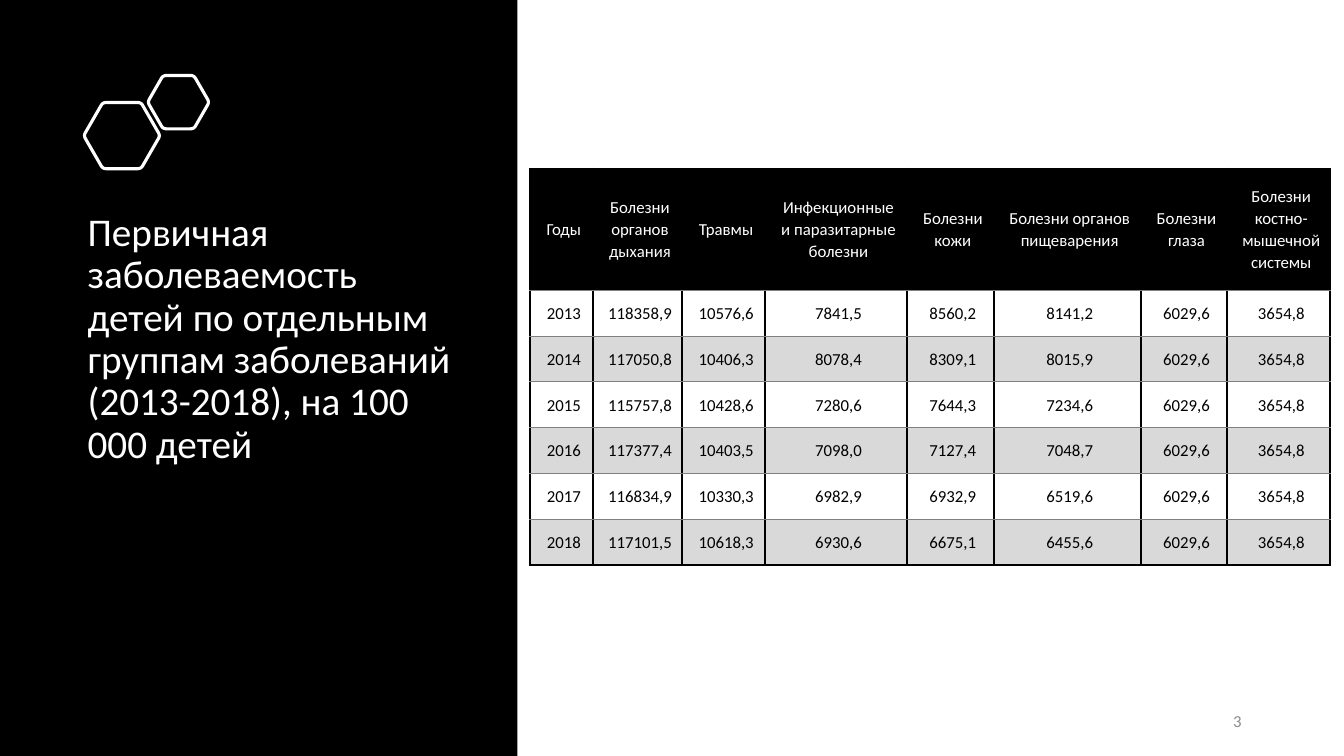
"""Builds the slide on primary childhood morbidity by disease group."""
import math
from dataclasses import dataclass

import lxml.etree
import pptx
import pptx.dml.color
import pptx.enum.shapes
import pptx.enum.text
import pptx.oxml.ns
import pptx.util

Pt = pptx.util.Pt
Align = pptx.enum.text.PP_ALIGN
Anchor = pptx.enum.text.MSO_ANCHOR


@dataclass(frozen=True)
class Theme:
    """Colours, font and type sizes."""
    dark: str = "000000"
    light: str = "FFFFFF"
    band: str = "D9D9D9"
    rule: str = "808080"
    muted: str = "8C8C8C"
    font: str = "Calibri"
    title_size: float = 28
    body_size: float = 12
    thick: float = 1.5
    thin: float = 0.5
    outline: float = 2.25


TITLE = ("Первичная заболеваемость детей по отдельным группам "
         "заболеваний (2013-2018), на 100 000 детей")
HEADERS = ["Годы", "Болезни органов дыхания", "Травмы",
           "Инфекционные\nи паразитарные болезни", "Болезни кожи",
           "Болезни органов пищеварения", "Болезни\nглаза",
           "Болезни костно-мышечной системы"]
RATES = [
    ["2013", "118358,9", "10576,6", "7841,5", "8560,2", "8141,2"],
    ["2014", "117050,8", "10406,3", "8078,4", "8309,1", "8015,9"],
    ["2015", "115757,8", "10428,6", "7280,6", "7644,3", "7234,6"],
    ["2016", "117377,4", "10403,5", "7098,0", "7127,4", "7048,7"],
    ["2017", "116834,9", "10330,3", "6982,9", "6932,9", "6519,6"],
    ["2018", "117101,5", "10618,3", "6930,6", "6675,1", "6455,6"],
]
CONSTANT_RATES = ["6029,6", "3654,8"]
COLUMN_WIDTHS = [44.6, 64.1, 59, 101.5, 61.9, 105.1, 61.9, 73.4]
HEADER_HEIGHT, ROW_HEIGHT = 87, 32.7
CELL_FORMAT = {"margin_left": Pt(6.5), "margin_top": Pt(5), "margin_right": Pt(2.9),
               "margin_bottom": Pt(5), "vertical_anchor": Anchor.MIDDLE}


def apply(target, values):
    """Set every attribute in values on the target."""
    for name, value in values.items():
        setattr(target, name, value)


def rgb(colour):
    """Turn a hex string into a colour."""
    return pptx.dml.color.RGBColor.from_string(colour)


def rounded_hexagon(centre, radius, cut=2.4, steps=6):
    """Return the outline of a regular hexagon with softened corners."""
    corners = [(centre[0] + radius * math.cos(k * math.pi / 3),
                centre[1] + radius * math.sin(k * math.pi / 3)) for k in range(6)]
    outline = []
    for k, corner in enumerate(corners):
        start, end = ([c + (n - c) * cut / radius for c, n in zip(corner, near)]
                      for near in (corners[k - 1], corners[(k + 1) % 6]))
        for t in (step / steps for step in range(steps + 1)):
            outline.append(tuple(Pt((1 - t) ** 2 * a + 2 * t * (1 - t) * c + t * t * b)
                                 for a, c, b in zip(start, corner, end)))
    return outline


class SlideBuilder:
    """Holds the theme and current slide and adds elements to it."""

    def __init__(self, slide, theme):
        """Keep the slide and theme."""
        self.slide, self.theme = slide, theme

    def set_text(self, frame, text, size, colour, align, spacing=1.0):
        """Fill a text frame, one paragraph per line."""
        frame.text = text
        for para in frame.paragraphs:
            apply(para, {"alignment": align, "line_spacing": spacing})
            for span in para.runs:
                apply(span.font, {"name": self.theme.font, "size": Pt(size)})
                span.font.color.rgb = rgb(colour)

    def panel(self, left, top, width, height):
        """Add the dark side panel behind the title."""
        box = self.slide.shapes.add_shape(
            pptx.enum.shapes.MSO_SHAPE.RECTANGLE, *map(Pt, (left, top, width, height)))
        box.shadow.inherit = False
        box.fill.solid()
        box.fill.fore_color.rgb = rgb(self.theme.dark)
        box.line.fill.background()
        self.slide.shapes.title.element.addprevious(box.element)

    def title(self, text, left, top, width, height):
        """Place and format the title placeholder."""
        box = self.slide.shapes.title
        apply(box, {"left": Pt(left), "top": Pt(top),
                    "width": Pt(width), "height": Pt(height)})
        apply(box.text_frame, {"word_wrap": True, "vertical_anchor": Anchor.BOTTOM,
                               "auto_size": pptx.enum.text.MSO_AUTO_SIZE.NONE})
        self.set_text(box.text_frame, text, self.theme.title_size, self.theme.light,
                      Align.LEFT, 0.9)

    def hexagons(self, items):
        """Add a group of outlined hexagons given as centre and radius."""
        group = self.slide.shapes.add_group_shape()
        for centre, radius in items:
            first, *rest = rounded_hexagon(centre, radius)
            builder = group.shapes.build_freeform(*first)
            builder.add_line_segments(rest, close=True)
            shape = builder.convert_to_shape()
            shape.shadow.inherit = False
            shape.fill.background()
            shape.line.color.rgb = rgb(self.theme.light)
            shape.line.width = Pt(self.theme.outline)

    def borders(self, cell, top, bottom):
        """Draw thick sides and the given top and bottom lines."""
        side = (self.theme.dark, self.theme.thick)
        properties = cell._tc.get_or_add_tcPr()
        for place, (tag, line) in enumerate(
                zip(("lnL", "lnR", "lnT", "lnB"), (side, side, top, bottom))):
            edge = lxml.etree.Element(pptx.oxml.ns.qn(f"a:{tag}"), w=str(Pt(line[1])))
            fill = lxml.etree.SubElement(edge, pptx.oxml.ns.qn("a:solidFill"))
            lxml.etree.SubElement(fill, pptx.oxml.ns.qn("a:srgbClr"), val=line[0])
            properties.insert(place, edge)

    def table(self, rows, left, top):
        """Add the banded table with a dark header row."""
        theme, last = self.theme, len(rows) - 1
        heights = [HEADER_HEIGHT] + [ROW_HEIGHT] * last
        table = self.slide.shapes.add_table(
            len(rows), len(COLUMN_WIDTHS), Pt(left), Pt(top),
            Pt(sum(COLUMN_WIDTHS)), Pt(sum(heights))).table
        for column, width in zip(table.columns, COLUMN_WIDTHS):
            column.width = Pt(width)
        heavy, light = (theme.dark, theme.thick), (theme.rule, theme.thin)
        for r, texts in enumerate(rows):
            table.rows[r].height = Pt(heights[r])
            fill = theme.dark if r == 0 else theme.light if r % 2 else theme.band
            ink = theme.light if r == 0 else theme.dark
            for c, text in enumerate(texts):
                cell = table.cell(r, c)
                apply(cell, CELL_FORMAT)
                cell.fill.solid()
                cell.fill.fore_color.rgb = rgb(fill)
                self.set_text(cell.text_frame, text, theme.body_size, ink, Align.CENTER, 1.07)
                self.borders(cell, heavy if r == 0 else light, heavy if r == last else light)

    def page_number(self, text, left, top, width, height):
        """Add the page number."""
        box = self.slide.shapes.add_textbox(*map(Pt, (left, top, width, height)))
        apply(box.text_frame, {"word_wrap": True, "vertical_anchor": Anchor.MIDDLE})
        self.set_text(box.text_frame, text, self.theme.body_size, self.theme.muted, Align.RIGHT)


def main():
    """Build and save the deck."""
    deck = pptx.Presentation()
    apply(deck, {"slide_width": Pt(960), "slide_height": Pt(540)})
    page = SlideBuilder(deck.slides.add_slide(deck.slide_layouts[5]), Theme())
    page.panel(0, 0, 369.5, 540)
    page.title(TITLE, 55.4, 127.4, 280, 209.5)
    page.hexagons([((87.1, 96.9), 27.3), ((127.5, 73), 22)])
    page.table([HEADERS] + [row + CONSTANT_RATES for row in RATES], 378.7, 120.3)
    page.page_number("3", 678, 500.5, 216, 28.8)
    deck.save("out.pptx")


if __name__ == "__main__":
    main()
